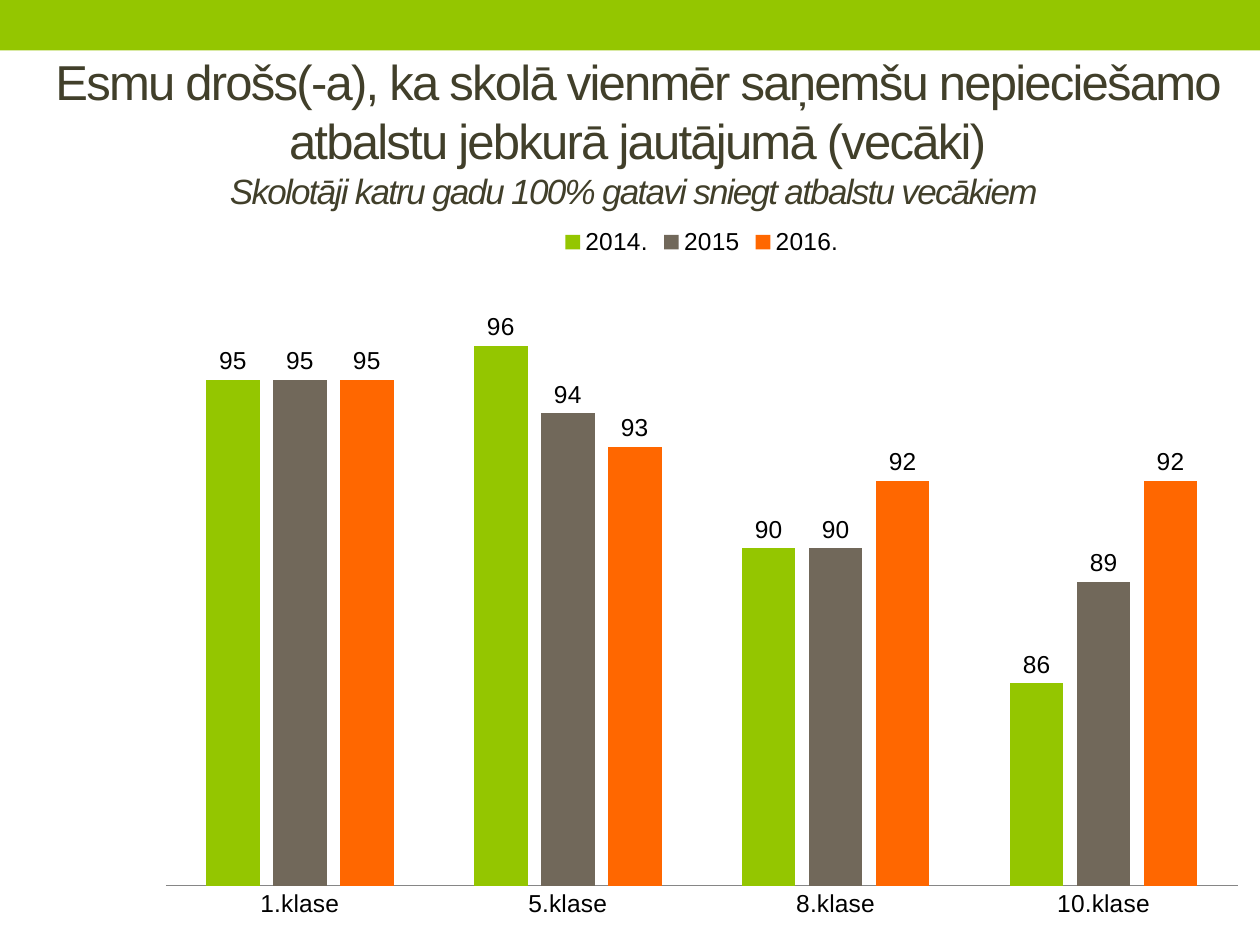
"""Builds a slide comparing parents' confidence in school support by class and year."""
import lxml.etree
import pptx
import pptx.chart.data
import pptx.dml.color
import pptx.enum.chart
import pptx.enum.shapes
import pptx.enum.text
import pptx.oxml.ns
import pptx.util

Inches = pptx.util.Inches

THEME = {
    "font": "Arial",
    "green": "94C600",
    "title": "413F2A",
    "text": "000000",
    "axis": "868686",
    "title_size": 28,
    "subtitle_size": 20,
    "chart_size": 14,
    "spacing": -100,
}
TITLE = "Esmu drošs(-a), ka skolā vienmēr saņemšu nepieciešamo atbalstu jebkurā jautājumā (vecāki)"
SUBTITLE = "Skolotāji katru gadu 100% gatavi sniegt atbalstu vecākiem "
CLASSES = ["1.klase", "5.klase", "8.klase", "10.klase"]
YEARS = [
    ("2014.", (95, 96, 90, 86), THEME["green"]),
    ("2015", (95, 94, 90, 89), "71685A"),
    ("2016.", (95, 93, 92, 92), "FF6700"),
]
BAND_BOX = (0, 0, 10, 0.4)
TITLE_BOX = (0.12, 0.29, 9.88, 1.51)
CHART_BOX = (1.14, 1.7, 8.86, 5.67)
PLOT_LAYOUT = {"x": 0.02, "y": 0.09, "w": 0.96, "h": 0.85}


def inches(box):
    return [Inches(length) for length in box]


def color(value):
    return pptx.dml.color.RGBColor.from_string(value)


def style_font(font, size, value):
    font.name = THEME["font"]
    font.size = pptx.util.Pt(size)
    font.color.rgb = color(value)


def add_band(slide):
    band = slide.shapes.add_shape(pptx.enum.shapes.MSO_SHAPE.RECTANGLE, *inches(BAND_BOX))
    band.shadow.inherit = False
    band.fill.solid()
    band.fill.fore_color.rgb = color(THEME["green"])
    band.line.fill.background()


def add_title(slide):
    title = slide.shapes.title
    title.left, title.top, title.width, title.height = inches(TITLE_BOX)
    frame = title.text_frame
    frame.word_wrap = True
    frame.auto_size = pptx.enum.text.MSO_AUTO_SIZE.NONE
    frame.vertical_anchor = pptx.enum.text.MSO_ANCHOR.MIDDLE
    paragraph = frame.paragraphs[0]
    paragraph.alignment = pptx.enum.text.PP_ALIGN.CENTER
    for text, size, italic in ((TITLE, THEME["title_size"], False),
                               (SUBTITLE, THEME["subtitle_size"], True)):
        if paragraph.runs:
            paragraph.add_line_break()
        run = paragraph.add_run()
        run.text = text
        style_font(run.font, size, THEME["title"])
        run.font.italic = italic
        run.font._element.set("spc", str(THEME["spacing"]))


def set_plot_layout(chart):
    qn = pptx.oxml.ns.qn
    plot_area = chart._chartSpace.chart.plotArea
    layout = plot_area.find(qn("c:layout"))
    if layout is None:
        layout = lxml.etree.Element(qn("c:layout"))
        plot_area.insert(0, layout)
    manual = lxml.etree.SubElement(layout, qn("c:manualLayout"))
    settings = {"layoutTarget": "inner", "xMode": "edge", "yMode": "edge", **PLOT_LAYOUT}
    for name, value in settings.items():
        lxml.etree.SubElement(manual, qn(f"c:{name}")).set("val", str(value))


def add_chart(slide):
    data = pptx.chart.data.CategoryChartData()
    data.categories = CLASSES
    for name, values, _ in YEARS:
        data.add_series(name, values)
    chart = slide.shapes.add_chart(
        pptx.enum.chart.XL_CHART_TYPE.COLUMN_CLUSTERED, *inches(CHART_BOX), data).chart
    style_font(chart.font, THEME["chart_size"], THEME["text"])
    chart.has_title = False
    chart.has_legend = True
    chart.legend.position = pptx.enum.chart.XL_LEGEND_POSITION.TOP
    chart.legend.include_in_layout = False
    style_font(chart.legend.font, THEME["chart_size"], THEME["text"])

    chart.value_axis.minimum_scale = 80
    chart.value_axis.maximum_scale = 98
    chart.value_axis.has_major_gridlines = False
    chart.value_axis.visible = False
    axis = chart.category_axis
    axis.major_tick_mark = pptx.enum.chart.XL_TICK_MARK.NONE
    axis.format.line.color.rgb = color(THEME["axis"])
    style_font(axis.tick_labels.font, THEME["chart_size"], THEME["text"])

    plot = chart.plots[0]
    plot.gap_width = 150
    plot.overlap = -25
    plot.vary_by_categories = False
    for series, (_, _, fill) in zip(plot.series, YEARS):
        series.format.fill.solid()
        series.format.fill.fore_color.rgb = color(fill)
        labels = series.data_labels
        labels.show_value = True
        labels.position = pptx.enum.chart.XL_LABEL_POSITION.OUTSIDE_END
        style_font(labels.font, THEME["chart_size"], THEME["text"])
    set_plot_layout(chart)


def main():
    presentation = pptx.Presentation()
    presentation.slide_width, presentation.slide_height = inches((10, 7.5))
    slide = presentation.slides.add_slide(presentation.slide_layouts[5])
    add_band(slide)
    add_title(slide)
    add_chart(slide)
    presentation.save("out.pptx")


if __name__ == "__main__":
    main()
